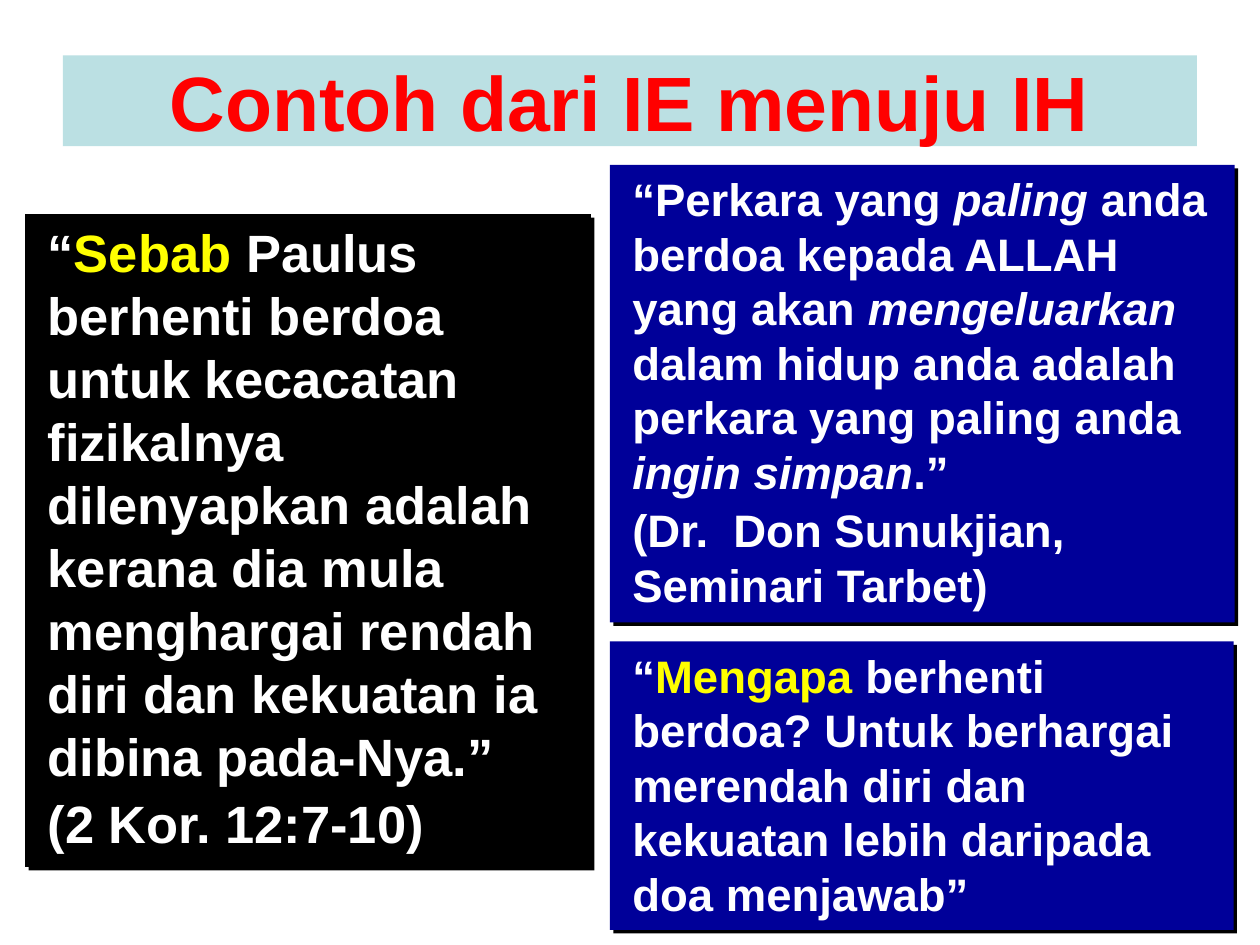
from dataclasses import dataclass

from lxml.etree import SubElement
from pptx import Presentation
from pptx.dml.color import RGBColor
from pptx.enum.shapes import MSO_SHAPE
from pptx.enum.text import MSO_ANCHOR, PP_ALIGN
from pptx.oxml.ns import qn
from pptx.util import Inches, Pt

WHITE, YELLOW, RED = "FFFFFF", "FFFF00", "FF0000"
BLACK, NAVY, PALE_TEAL = "000000", "000099", "BBE0E3"


@dataclass
class Span:
    text: str
    color: str = WHITE
    italic: bool = False


@dataclass
class Panel:
    left: float
    top: float
    width: float
    height: float
    fill: str
    size: int
    paragraphs: list[list[Span]]


def color(value: str) -> RGBColor:
    return RGBColor.from_string(value)


def add_box(slide, left: float, top: float, width: float, height: float, fill: str):
    shape = slide.shapes.add_shape(MSO_SHAPE.RECTANGLE, Inches(left), Inches(top),
                                   Inches(width), Inches(height))
    shape.shadow.inherit = False
    shape.fill.solid()
    shape.fill.fore_color.rgb = color(fill)
    shape.line.fill.background()
    shape.text_frame.word_wrap = True
    return shape


def set_font(paragraph, size: int) -> None:
    paragraph.font.name = "Arial"
    paragraph.font.size = Pt(size)
    paragraph.font.bold = True


def add_hard_shadow(shape) -> None:
    effects = shape._element.spPr.find(qn("a:effectLst"))
    shadow = SubElement(effects, qn("a:outerShdw"), dist=str(Pt(2.8)),
                        dir=str(45 * 60000), algn="ctr", rotWithShape="0")
    SubElement(shadow, qn("a:srgbClr"), val=BLACK)


def add_title(slide, text: str) -> None:
    shape = add_box(slide, 0.5, 0.44, 9, 0.72, PALE_TEAL)
    shape.text_frame.vertical_anchor = MSO_ANCHOR.MIDDLE
    paragraph = shape.text_frame.paragraphs[0]
    paragraph.text = text
    paragraph.alignment = PP_ALIGN.CENTER
    set_font(paragraph, 44)
    paragraph.font.color.rgb = color(RED)


def add_panel(slide, panel: Panel) -> None:
    shape = add_box(slide, panel.left, panel.top, panel.width, panel.height, panel.fill)
    add_hard_shadow(shape)
    frame = shape.text_frame
    frame.vertical_anchor = MSO_ANCHOR.TOP
    for index, spans in enumerate(panel.paragraphs):
        paragraph = frame.add_paragraph() if index else frame.paragraphs[0]
        paragraph.alignment = PP_ALIGN.LEFT
        paragraph.space_before = Pt(2)
        paragraph._p.get_or_add_pPr().set("marL", str(Inches(0.08)))
        set_font(paragraph, panel.size)
        for span in spans:
            run = paragraph.add_run()
            run.text = span.text
            run.font.color.rgb = color(span.color)
            run.font.italic = span.italic


PANELS = [
    # Scripture passage on the left
    Panel(0.2, 1.7, 4.49, 5.18, BLACK, 30, [
        [Span("“"), Span("Sebab ", YELLOW),
         Span("Paulus berhenti berdoa untuk kecacatan fizikalnya dilenyapkan adalah "
              "kerana dia mula menghargai rendah diri dan kekuatan ia dibina pada-Nya.”")],
        [Span("(2 Kor. 12:7-10)")],
    ]),
    # Quotation at upper right
    Panel(4.84, 1.31, 4.96, 3.63, NAVY, 26, [
        [Span("“Perkara yang "), Span("paling ", italic=True),
         Span("anda berdoa kepada ALLAH yang akan "), Span("mengeluarkan ", italic=True),
         Span("dalam hidup anda adalah perkara yang paling anda "),
         Span("ingin simpan", italic=True), Span(".”")],
        [Span("(Dr.  Don Sunukjian, Seminari Tarbet)")],
    ]),
    # Question at lower right
    Panel(4.84, 5.09, 4.95, 2.29, NAVY, 26, [
        [Span("“"), Span("Mengapa ", YELLOW),
         Span("berhenti berdoa? Untuk berhargai merendah diri dan kekuatan lebih "
              "daripada doa menjawab”")],
    ]),
]


def main() -> None:
    presentation = Presentation()
    presentation.slide_width = Inches(10)
    presentation.slide_height = Inches(7.5)
    slide = presentation.slides.add_slide(presentation.slide_layouts[6])
    add_title(slide, "Contoh dari IE menuju IH")
    for panel in PANELS:
        add_panel(slide, panel)
    presentation.save("out.pptx")


if __name__ == "__main__":
    main()
